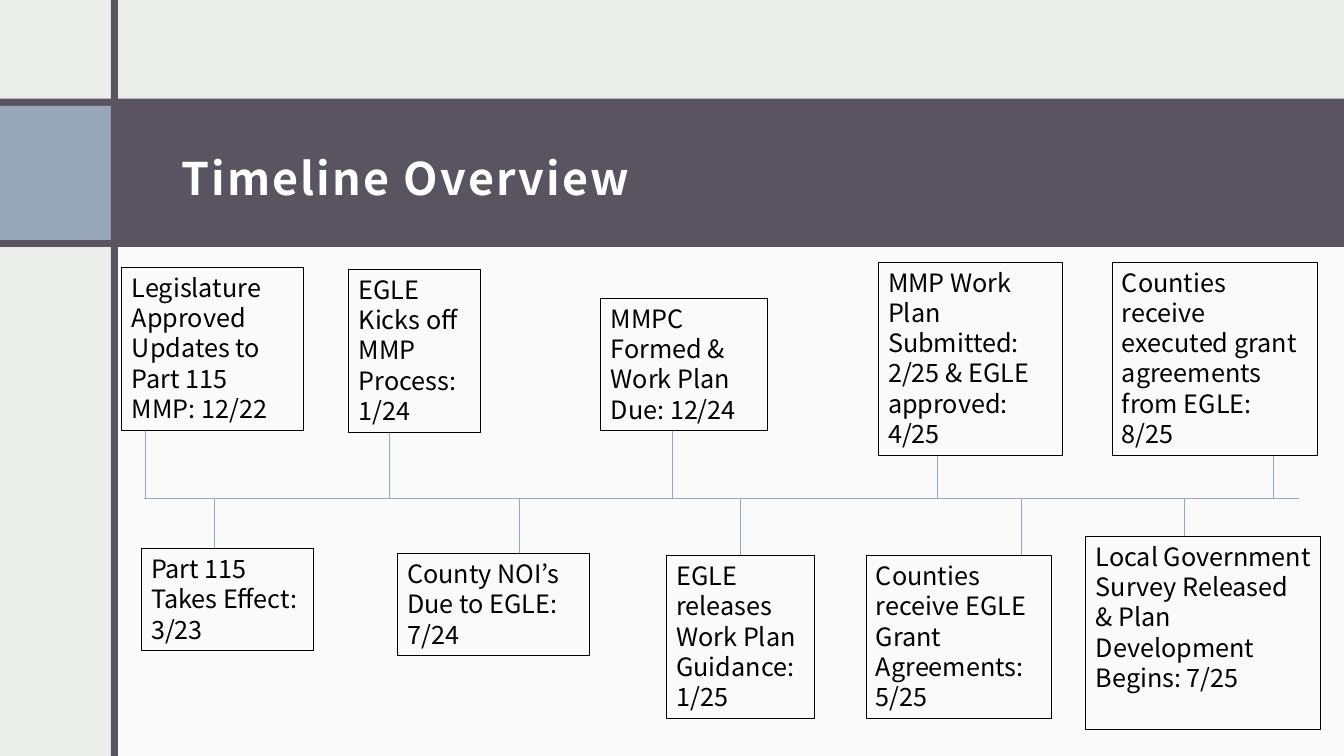
from lxml import etree
from pptx import Presentation
from pptx.dml.color import RGBColor
from pptx.enum.shapes import MSO_CONNECTOR, MSO_SHAPE
from pptx.enum.text import MSO_ANCHOR, PP_ALIGN
from pptx.oxml.ns import qn
from pptx.util import Inches, Pt

FONT = "Noto Sans CJK JP"
PLUM, BLUE, PALE = "595460", "97A7B8", "EBEDEB"
WHITE, BLACK = "FFFFFF", "000000"
AXIS_Y = 4.95

# Text, stem position, then left, top, width and height of the box
EVENTS = [
    ("Legislature Approved Updates to Part 115 MMP: 12/22", 1.44, 1.21, 2.65, 1.8, 1.62),
    ("Part 115 Takes Effect: 3/23", 2.13, 1.4, 5.44, 1.71, 1.01),
    ("EGLE Kicks off MMP Process: 1/24", 3.86, 3.46, 2.67, 1.31, 1.62),
    ("County NOI’s Due to EGLE: 7/24", 5.15, 3.94, 5.49, 1.91, 1.01),
    ("MMPC Formed & Work Plan Due: 12/24", 6.67, 5.96, 2.96, 1.65, 1.31),
    ("EGLE releases Work Plan Guidance: 1/25", 7.34, 6.61, 5.51, 1.47, 1.62),
    ("MMP Work Plan Submitted: 2/25 & EGLE approved: 4/25", 9.3, 8.71, 2.6, 1.83, 1.92),
    ("Counties receive EGLE Grant Agreements: 5/25", 10.13, 8.59, 5.51, 1.84, 1.62),
    ("Counties receive executed grant agreements from EGLE: 8/25",
     12.63, 11.03, 2.6, 2.04, 1.92),
    ("Local Government Survey Released & Plan Development Begins: 7/25",
     11.75, 10.77, 5.32, 2.33, 1.92),
]


def color(value):
    return RGBColor.from_string(value)


class TimelineSlide:
    def __init__(self, presentation):
        self.slide = presentation.slides.add_slide(presentation.slide_layouts[6])
        background = self.slide.background.fill
        background.solid()
        background.fore_color.rgb = color(PALE)

    def panel(self, left, top, width, height, fill, opacity=100):
        shape = self.slide.shapes.add_shape(
            MSO_SHAPE.RECTANGLE, Inches(left), Inches(top), Inches(width), Inches(height))
        shape.shadow.inherit = False
        shape.line.fill.background()
        shape.fill.solid()
        shape.fill.fore_color.rgb = color(fill)
        if opacity < 100:
            tint = shape.fill._xPr.find(qn("a:solidFill"))[0]
            etree.SubElement(tint, qn("a:alpha")).set("val", str(opacity * 1000))

    def text(self, words, left, top, width, height, size, ink, bold=False):
        shape = self.slide.shapes.add_textbox(
            Inches(left), Inches(top), Inches(width), Inches(height))
        shape.text_frame.word_wrap = True
        paragraph = shape.text_frame.paragraphs[0]
        paragraph.text = words
        paragraph.alignment = PP_ALIGN.LEFT
        paragraph.font.name = FONT
        paragraph.font.size = Pt(size)
        paragraph.font.bold = bold
        paragraph.font.color.rgb = color(ink)
        return shape

    def title(self, words, left, top, width, height):
        shape = self.text(words, left, top, width, height, 32, WHITE, bold=True)
        frame = shape.text_frame
        frame.vertical_anchor = MSO_ANCHOR.MIDDLE
        frame.margin_left = frame.margin_right = Inches(0.12)
        frame.margin_top, frame.margin_bottom = Inches(0.2), Inches(0.1)
        run = frame.paragraphs[0].runs[0]
        run._r.get_or_add_rPr().set("spc", "150")

    def line(self, x1, y1, x2, y2):
        connector = self.slide.shapes.add_connector(
            MSO_CONNECTOR.STRAIGHT, Inches(x1), Inches(y1), Inches(x2), Inches(y2))
        connector.line.color.rgb = color(BLUE)
        connector.line.width = Pt(0.75)
        etree.SubElement(connector._element.spPr, qn("a:effectLst"))

    def event(self, words, stem, left, top, width, height):
        above = top < AXIS_Y
        self.line(stem, AXIS_Y, stem, top + height if above else top)
        shape = self.text(words, left, top, width, height, 18, BLACK)
        shape.text_frame.paragraphs[0].line_spacing = Pt(21.6)
        shape.line.color.rgb = color(BLACK)
        shape.line.width = Pt(0.75)


def main():
    presentation = Presentation()
    presentation.slide_width = Inches(13.33)
    presentation.slide_height = Inches(7.5)
    timeline = TimelineSlide(presentation)

    # Backdrop and title band
    timeline.panel(1.14, 2.33, 12.19, 5.17, WHITE, opacity=75)
    timeline.panel(0, 0.98, 13.33, 1.47, PLUM)
    timeline.panel(0, 1.05, 1.1, 1.33, BLUE)
    timeline.panel(1.1, 0, 0.07, 7.5, PLUM)
    timeline.title("Timeline Overview", 1.68, 1.05, 10.95, 1.33)

    # Time axis and events
    timeline.line(1.43, AXIS_Y, 12.88, AXIS_Y)
    for event in EVENTS:
        timeline.event(*event)

    presentation.save("out.pptx")


if __name__ == "__main__":
    main()
